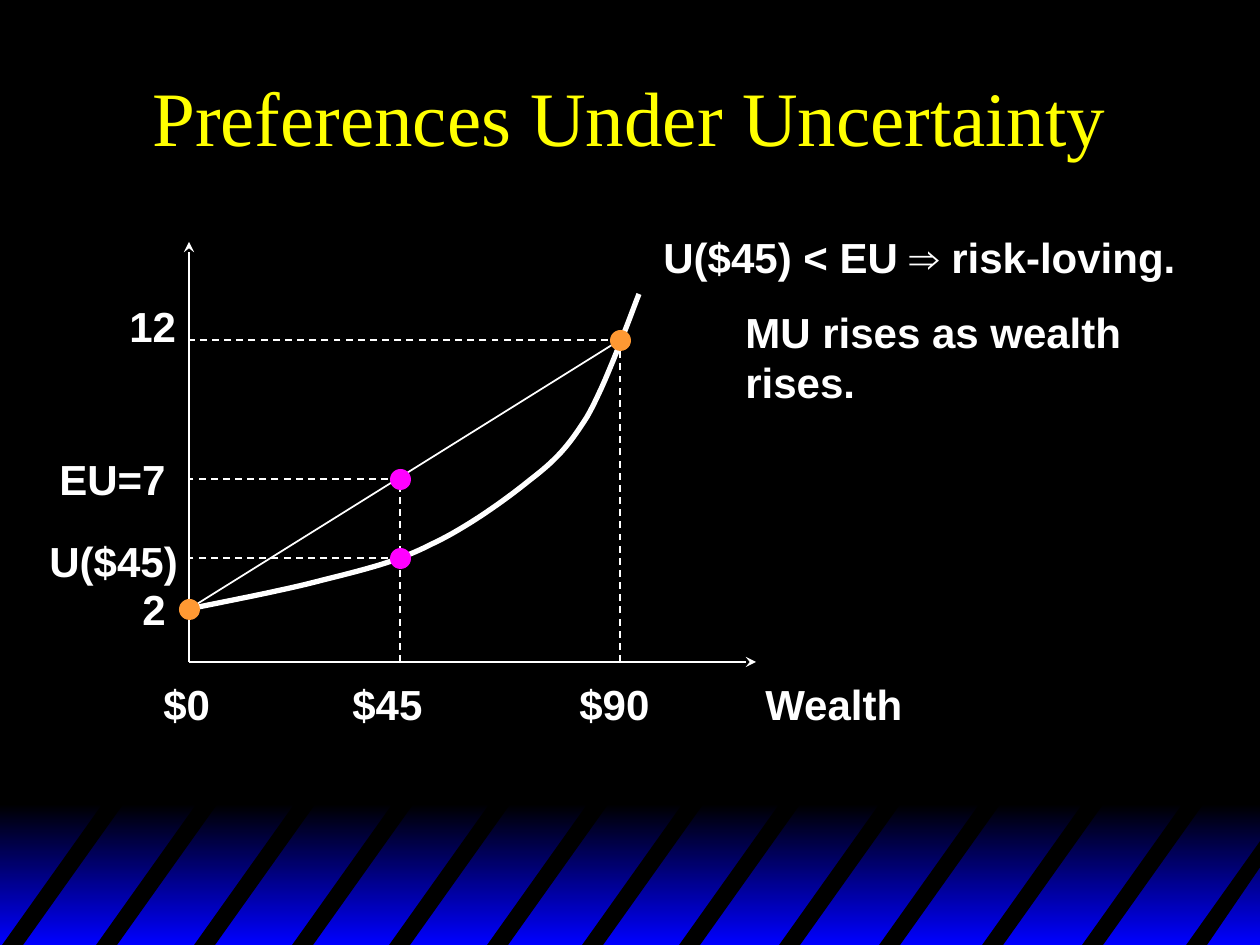
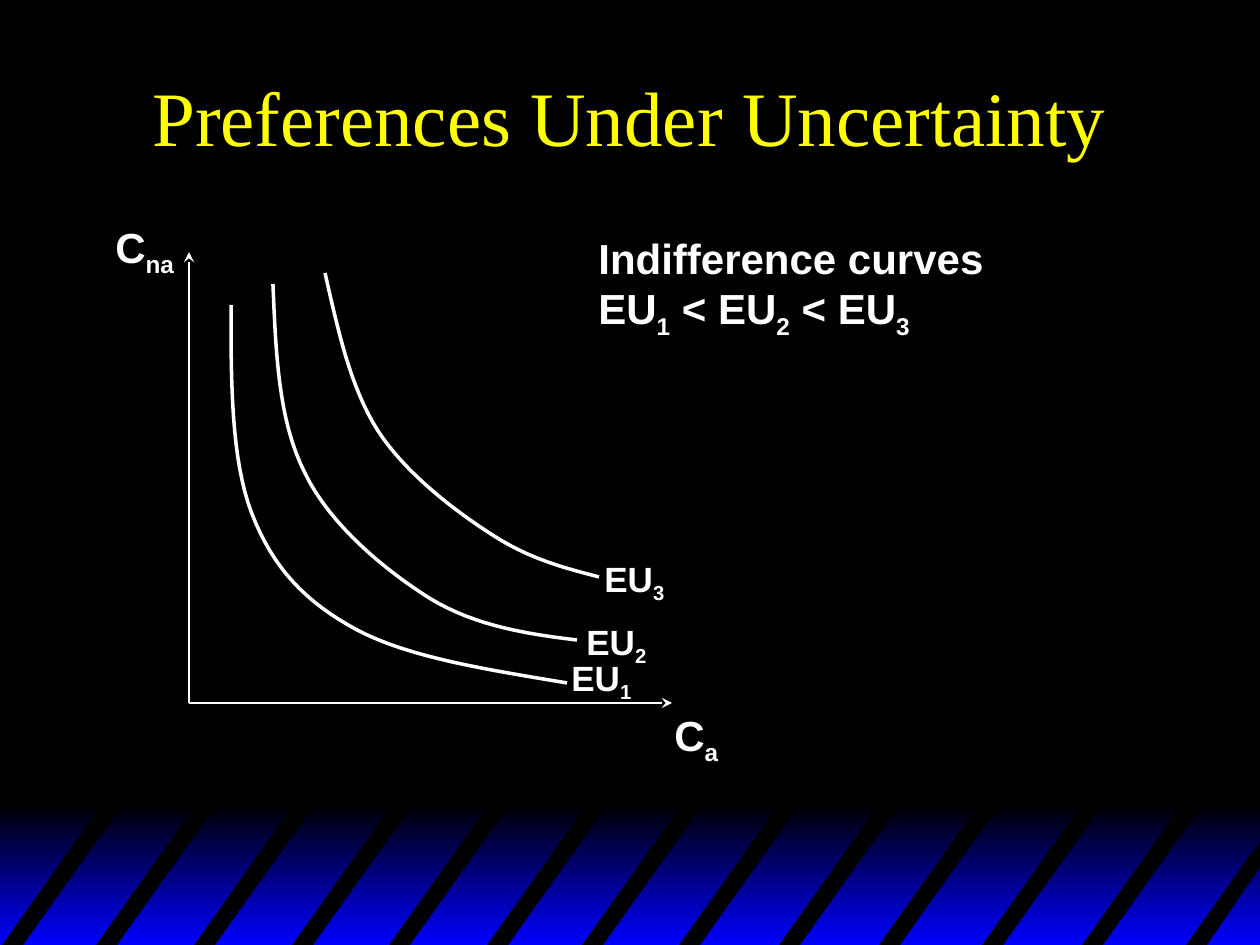
"""Builds two slides on preferences under uncertainty."""
from lxml.etree import SubElement
from pptx import Presentation
from pptx.dml.color import RGBColor
from pptx.enum.dml import MSO_LINE
from pptx.enum.shapes import MSO_CONNECTOR, MSO_SHAPE
from pptx.enum.text import MSO_ANCHOR, PP_ALIGN
from pptx.oxml.ns import qn
from pptx.util import Pt

PX = 914400 / 126
COLORS = {
    "black": "000000", "blue": "0000FF", "white": "FFFFFF",
    "yellow": "FFFF00", "magenta": "FF00FF", "orange": "FF9933",
}
TITLE = "Preferences Under Uncertainty"
STRIPES = [0, 94, 192, 290, 387, 485, 580, 677, 777, 877, 980, 1080]
LAST_STRIPE = [(1184, 948), (1263, 837), (1263, 863), (1205, 948)]
SUB = "_"

RISK_LOVING = {
    "axes": [(189, 662, 189, 242), (189, 662, 756, 662)],
    "dashes": [
        (620, 662, 620, 340), (620, 340, 189, 340), (400, 662, 400, 482),
        (400, 558, 189, 558), (400, 479, 189, 479),
    ],
    "chords": [(189, 609, 620, 340)],
    "curve_width": 3,
    "curves": [[
        (189, 609), (212, 604), (282, 591), (323, 580), (363, 570), (397, 562),
        (432, 544), (466, 528), (504, 501), (530, 480), (556, 460), (568, 447),
        (587, 417), (605, 386), (629, 320), (639, 294),
    ]],
    "dots": [
        (400, 558, "magenta"), (400, 479, "magenta"),
        (189, 609, "orange"), (620, 340, "orange"),
    ],
    "labels": [
        (753, 672, 163, 63, 24, [["Wealth"]]),
        (151, 672, 72, 63, 24, [["$0"]]),
        (340, 672, 96, 63, 24, [["$45"]]),
        (567, 672, 96, 63, 24, [["$90"]]),
        (117, 294, 72, 63, 24, [["12"]]),
        (47, 447, 132, 63, 24, [["EU=7"]]),
        (37, 529, 154, 63, 24, [["U($45)"]]),
        (130, 577, 49, 63, 24, [["2"]]),
        (651, 225, 548, 63, 24, [["U($45) < EU ⇒ risk-loving."]]),
        (733, 300, 401, 113, 24, [["MU rises as wealth"], ["rises."]]),
    ],
}
INDIFFERENCE = {
    "axes": [(189, 703, 189, 252), (189, 703, 672, 703)],
    "dashes": [],
    "chords": [],
    "curve_width": 2,
    "curves": [
        [(231, 305), (231, 382), (231, 460), (252, 514), (273, 568),
         (305, 602), (357, 630), (410, 658), (489, 670), (567, 683)],
        [(273, 284), (276, 352), (278, 420), (305, 473), (330, 525),
         (386, 571), (431, 599), (476, 626), (527, 634), (577, 640)],
        [(325, 273), (338, 330), (350, 387), (378, 431), (406, 474),
         (456, 512), (494, 536), (530, 559), (564, 568), (599, 577)],
    ],
    "dots": [],
    "labels": [
        (103, 215, 88, 63, 24, [["C", "_na"]]),
        (662, 703, 72, 63, 24, [["C", "_a"]]),
        (559, 650, 87, 54, 20, [["EU", "_1"]]),
        (574, 614, 87, 54, 20, [["EU", "_2"]]),
        (592, 551, 87, 54, 20, [["EU", "_3"]]),
        (586, 226, 411, 113, 24, [
            ["Indifference curves", "\n", "EU", "_1", " < EU", "_2", " < EU", "_3"]]),
    ],
}


def emu(*lengths):
    return [round(n * PX) for n in lengths]


def rgb(name):
    return RGBColor.from_string(COLORS[name])


def paint(sp, color):
    sp.shadow.inherit = False
    sp.fill.solid()
    sp.fill.fore_color.rgb = rgb(color)
    sp.line.fill.background()


def add_outline(slide, points, close):
    points = [emu(*pt) for pt in points]
    fb = slide.shapes.build_freeform(*points[0])
    fb.add_line_segments(points[1:], close=close)
    return fb.convert_to_shape()


def add_text(slide, box, paragraphs, size, font="Arial", color="white", bold=True):
    tf = slide.shapes.add_textbox(*emu(*box)).text_frame
    tf.word_wrap = False
    for i, runs in enumerate(paragraphs):
        p = tf.add_paragraph() if i else tf.paragraphs[0]
        for text in runs:
            if text == "\n":
                p.add_line_break()
                continue
            r = p.add_run()
            r.text = text.lstrip(SUB)
            r.font.name, r.font.size, r.font.bold = font, Pt(size), bold
            r.font.color.rgb = rgb(color)
            if text.startswith(SUB):
                r._r.get_or_add_rPr().set("baseline", "-25000")
    return tf


def add_line(slide, ends, dashed=False, arrow=False):
    c = slide.shapes.add_connector(MSO_CONNECTOR.STRAIGHT, *emu(*ends))
    c.line.color.rgb = rgb("white")
    c.line.width = Pt(1)
    if dashed:
        c.line.dash_style = MSO_LINE.DASH
    props = c._element.spPr
    if arrow:
        SubElement(props.find(qn("a:ln")), qn("a:tailEnd"), type="stealth")
    SubElement(props, qn("a:effectLst"))


def add_curve(slide, controls, width, steps=16):
    points = [controls[0]]
    for i in range(0, len(controls) - 1, 3):
        a, b, c, d = controls[i:i + 4]
        for k in range(1, steps + 1):
            t = k / steps
            u = 1 - t
            points.append([
                u**3 * a[n] + 3 * u * u * t * b[n] + 3 * u * t * t * c[n] + t**3 * d[n]
                for n in (0, 1)])
    sp = add_outline(slide, points, False)
    sp.shadow.inherit = False
    sp.fill.background()
    sp.line.color.rgb = rgb("white")
    sp.line.width = Pt(width)


def add_frame(slide):
    slide.background.fill.solid()
    slide.background.fill.fore_color.rgb = rgb("black")
    band = slide.shapes.add_shape(MSO_SHAPE.RECTANGLE, *emu(0, 804, 1263, 141))
    paint(band, "blue")
    band.fill.gradient()
    band.fill.gradient_angle = 270
    for stop, color, position in zip(band.fill.gradient_stops, ("black", "blue"), (0, 1)):
        stop.color.rgb = rgb(color)
        stop.position = position
    stripes = [[(x, 948), (x + 106, 799), (x + 127, 799), (x + 21, 948)] for x in STRIPES]
    for points in stripes + [LAST_STRIPE]:
        paint(add_outline(slide, points, True), "black")
    tf = add_text(slide, (94, 32, 1071, 168), [[TITLE]], 44, "Times New Roman", "yellow", False)
    tf.word_wrap = True
    tf.vertical_anchor = MSO_ANCHOR.MIDDLE
    tf.paragraphs[0].alignment = PP_ALIGN.CENTER


def add_diagram(slide, diagram):
    for ends in diagram["axes"]:
        add_line(slide, ends, arrow=True)
    for ends in diagram["dashes"]:
        add_line(slide, ends, dashed=True)
    for ends in diagram["chords"]:
        add_line(slide, ends)
    for controls in diagram["curves"]:
        add_curve(slide, controls, diagram["curve_width"])
    for *box, size, paragraphs in diagram["labels"]:
        add_text(slide, box, paragraphs, size)
    for x, y, color in diagram["dots"]:
        paint(slide.shapes.add_shape(MSO_SHAPE.OVAL, *emu(x - 10, y - 10, 21, 21)), color)


def main():
    prs = Presentation()
    prs.slide_width, prs.slide_height = emu(1260, 945)
    for diagram in (RISK_LOVING, INDIFFERENCE):
        slide = prs.slides.add_slide(prs.slide_layouts[6])
        add_frame(slide)
        add_diagram(slide, diagram)
    prs.save("out.pptx")


if __name__ == "__main__":
    main()
